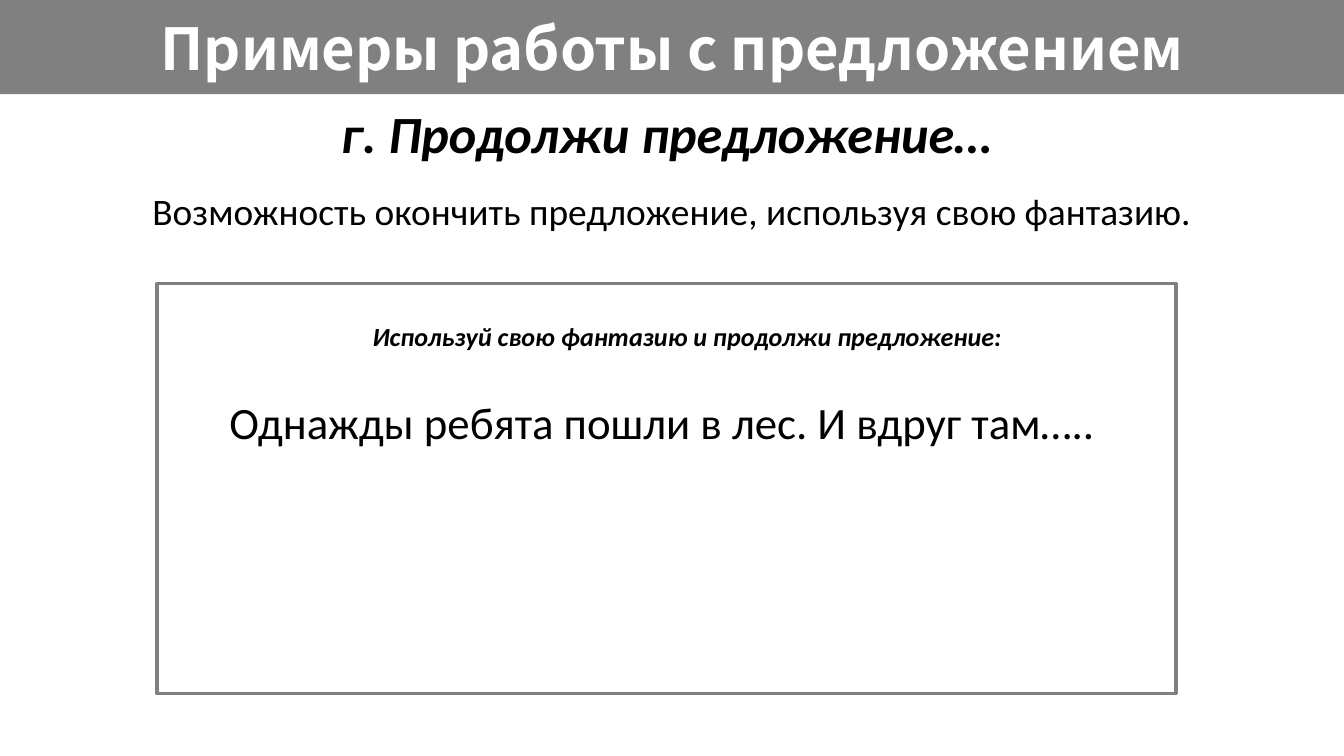
from pptx import Presentation
from pptx.dml.color import RGBColor
from pptx.enum.shapes import MSO_SHAPE
from pptx.enum.text import MSO_ANCHOR, PP_ALIGN
from pptx.util import Cm, Pt

WIDE, HIGH = 25.4, 14.29
BAR = 1.78


def color(code):
    return RGBColor.from_string(code)


class Deck:
    """Holds the style and the current slide."""
    face = "Calibri"
    ink, gray, white = "000000", "808080", "FFFFFF"

    def __init__(self):
        self.show = Presentation()
        self.show.slide_width, self.show.slide_height = Cm(WIDE), Cm(HIGH)
        self.slide = self.show.slides.add_slide(self.show.slide_layouts[6])

    def rect(self, box, fill, line=None):
        shape = self.slide.shapes.add_shape(
            MSO_SHAPE.RECTANGLE, *map(Cm, box))
        shape.shadow.inherit = False
        shape.fill.solid()
        shape.fill.fore_color.rgb = color(fill)
        if line:
            shape.line.color.rgb = color(line)
            shape.line.width = Pt(2)
        else:
            shape.line.fill.background()
        return shape

    def label(self, shape, *rows):
        """Each row is a text, its ink, the gap above and its font values."""
        frame = shape.text_frame
        frame.word_wrap = True
        for i, (text, ink, gap, form) in enumerate(rows):
            para = frame.add_paragraph() if i else frame.paragraphs[0]
            para.alignment = PP_ALIGN.CENTER
            para.space_before = Pt(gap)
            run = para.add_run()
            run.text = text
            run.font.color.rgb = color(ink)
            for key, value in {"name": self.face, **form}.items():
                setattr(run.font, key, value)

    def text(self, box, *rows):
        self.label(self.slide.shapes.add_textbox(*map(Cm, box)), *rows)


def main():
    deck = Deck()
    ink = deck.ink
    strong = {"bold": True, "italic": True}

    # Title bar
    bar = deck.rect((0, 0, WIDE, BAR), deck.gray)
    bar.text_frame.vertical_anchor = MSO_ANCHOR.MIDDLE
    deck.label(bar, ("Примеры работы с предложением", deck.white, 0,
                     {"name": "Noto Sans CJK JP", "size": Pt(31),
                      "bold": True}))

    # Task frame
    deck.rect((2.97, 5.36, 19.25, 7.75), deck.white, deck.gray)

    # Heading and its purpose
    deck.text((0, BAR, WIDE, 2.77),
              ("г. Продолжи предложение… ", ink, 0,
               {"size": Pt(28), **strong}),
              ("Возможность окончить предложение, используя свою фантазию.",
               ink, 13.4, {"size": Pt(20)}))

    # Task inside the frame
    deck.text((4.17, 5.94, 17.65, 0.86),
              ("Используй свою фантазию и продолжи предложение:", ink, 0,
               {"size": Pt(14), **strong}))
    deck.text((3.18, 7.34, 18.85, 1.27),
              ("Однажды ребята пошли в лес. И вдруг там….. ", ink, 0,
               {"size": Pt(24)}))

    deck.show.save("out.pptx")


if __name__ == "__main__":
    main()
